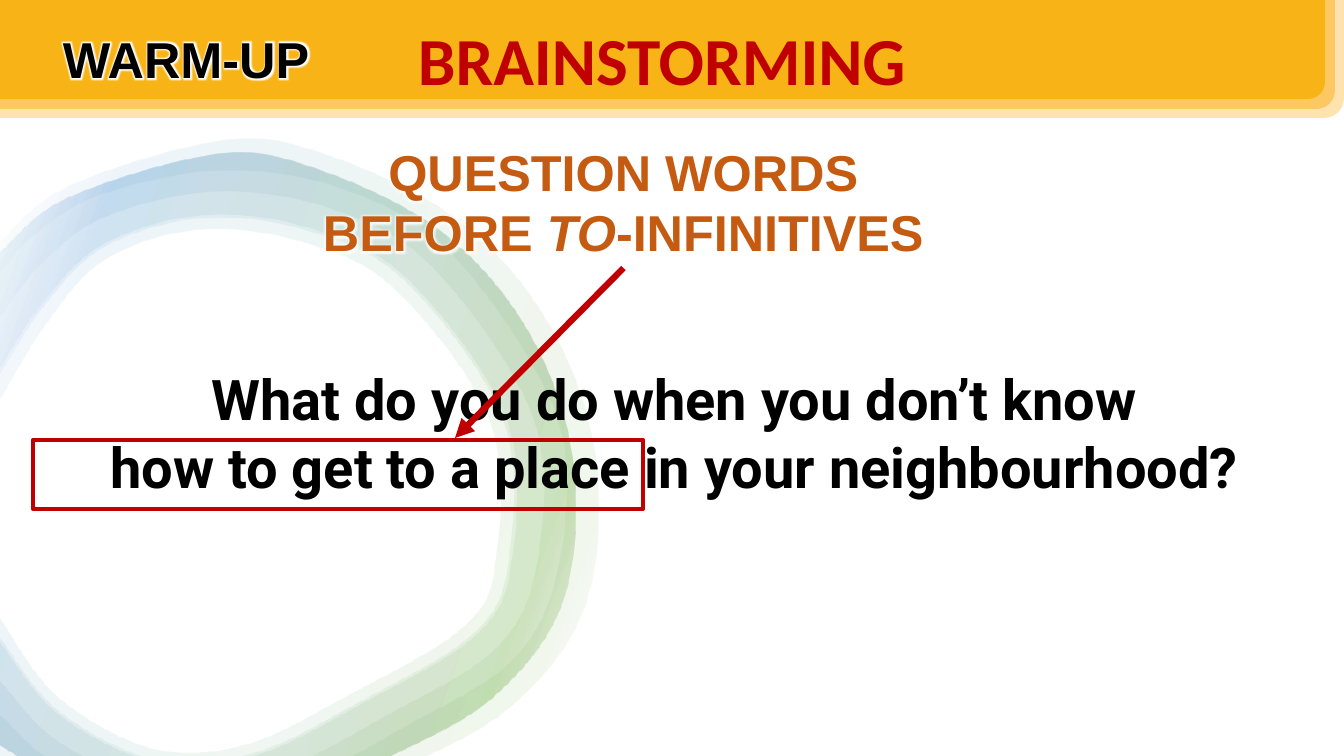
"""Build the warm-up brainstorming slide on question words before to-infinitives."""
from lxml import etree
from pptx import Presentation
from pptx.dml.color import RGBColor
from pptx.enum.shapes import MSO_CONNECTOR, MSO_SHAPE
from pptx.enum.text import MSO_ANCHOR, MSO_AUTO_SIZE, PP_ALIGN
from pptx.oxml import parse_xml
from pptx.oxml.ns import nsdecls, qn
from pptx.util import Pt

PX = 12192000 / 1344
LEFT, CENTER = PP_ALIGN.LEFT, PP_ALIGN.CENTER
TOP, GROW = MSO_ANCHOR.TOP, MSO_AUTO_SIZE.SHAPE_TO_FIT_TEXT
STRAIGHT = MSO_CONNECTOR.STRAIGHT
CORNERED, RECTANGLE = MSO_SHAPE.ROUND_1_RECTANGLE, MSO_SHAPE.RECTANGLE
COLORS = {
    "pale": "FEE3AF", "amber": "FBC864", "gold": "F8B417", "white": "FFFFFF",
    "green": "70AD47", "blue": "5B9BD5", "black": "000000", "red": "C00000",
    "rust": "C55A11",
}


def px(*lengths):
    return [round(length * PX) for length in lengths]


def smooth(anchors, steps=6):
    curve = []
    padded = [anchors[0], *anchors, anchors[-1]]
    for before, start, end, after in zip(padded, padded[1:], padded[2:], padded[3:]):
        for step in range(steps):
            t = step / steps
            curve.append(px(*(
                b + ((c - a) * t + (2 * a - 5 * b + 4 * c - d) * t ** 2
                     + (3 * b - a - 3 * c + d) * t ** 3) / 2
                for a, b, c, d in zip(before, start, end, after))))
    return curve + [px(*anchors[-1])]


prs = Presentation()
prs.slide_width, prs.slide_height = px(1344, 756)
slide = prs.slides.add_slide(prs.slide_layouts[5])
shapes = slide.shapes

for color, inset in (("pale", 0), ("amber", 9), ("gold", 19)):
    band = shapes.add_shape(CORNERED, *px(0, -1, 1344 - inset, 119 - inset))
    band.shadow.inherit = False
    band.fill.solid()
    band.fill.fore_color.rgb = RGBColor.from_string(COLORS[color])
    band.line.fill.background()
    band.element.spPr.xfrm.set("flipV", "1")

outer_edge = [
    (0, 252), (66, 198), (215, 154), (314, 168), (439, 230), (527, 330), (572, 458),
    (563, 599), (492, 697), (381, 760), (263, 815), (133, 819), (0, 745)]
thin_edge = [
    (0, 714), (61, 767), (174, 806), (292, 784), (407, 725), (514, 658), (559, 560),
    (556, 416), (453, 256), (344, 190), (222, 171), (101, 195), (35, 235), (0, 273)]
thick_edge = [
    (0, 618), (57, 696), (152, 748), (245, 744), (345, 696), (462, 627), (495, 560),
    (489, 420), (392, 287), (295, 240), (193, 230), (102, 261), (44, 326), (0, 399)]
stops = "".join(
    f'<a:gs pos="{position * 1000}"><a:srgbClr val="{COLORS[color]}">'
    '<a:alpha val="10000"/></a:srgbClr></a:gs>'
    for position, color in ((2, "white"), (16, "green"), (85, "blue"), (100, "white")))
wash = (f'<a:gradFill {nsdecls("a")}><a:gsLst>{stops}</a:gsLst>'
        '<a:lin ang="12000000" scaled="0"/></a:gradFill>')
for thickness, spread in ((0.35, 0), (0.75, 0), (1, 0), (0.8, 0), (0, 0.04)):
    outer = [(x * (1 + spread), y + (y - 485) * spread) for x, y in outer_edge]
    inner = [(a + (c - a) * thickness, b + (d - b) * thickness)
             for (a, b), (c, d) in zip(thin_edge, thick_edge)]
    outline = smooth(outer) + smooth(inner)
    builder = shapes.build_freeform(*outline[0])
    builder.add_line_segments(outline[1:], close=True)
    ring = builder.convert_to_shape()
    ring.shadow.inherit = False
    ring.line.fill.background()
    ring.element.spPr.find(qn("a:custGeom")).addnext(parse_xml(wash))

title = shapes.title
warm_up, question, topic = [shapes.add_textbox(0, 0, 0, 0) for _ in range(3)]
texts = [
    (warm_up, (53, 23, 456, 72), LEFT, "black", True,
     {"name": "Arial", "size": Pt(36)}, [[("WARM-UP", False)]]),
    (title, (374, 13, 576, 92), CENTER, "red", False,
     {"name": "Calibri", "size": Pt(48)}, [[("BRAINSTORMING", False)]]),
    (question, (38, 360, 1286, 146), CENTER, "black", False,
     {"name": "Roboto", "size": Pt(40)},
     [[("What do you do when you don’t know ", False)],
      [("how to get to a place in your neighbourhood? ", False)]]),
    (topic, (293, 136, 661, 132), CENTER, "rust", True,
     {"name": "Arial", "size": Pt(36)},
     [[("QUESTION WORDS BEFORE ", False), ("TO", True), ("-INFINITIVES", False)]]),
]
glow = (f'<a:effectLst {nsdecls("a")}><a:glow rad="63500">'
        f'<a:srgbClr val="{COLORS["white"]}"/></a:glow></a:effectLst>')
frame_format = {"word_wrap": True, "auto_size": GROW, "vertical_anchor": TOP}
for box, place, align, color, glows, font_format, paragraphs in texts:
    shapes.element.append(box.element)
    box.left, box.top, box.width, box.height = px(*place)
    frame = box.text_frame
    for key, value in frame_format.items():
        setattr(frame, key, value)
    for index, runs in enumerate(paragraphs):
        paragraph = frame.add_paragraph() if index else frame.paragraphs[0]
        paragraph.alignment = align
        paragraph.line_spacing = 1.0
        for text, italic in runs:
            run = paragraph.add_run()
            run.text = text
            for key, value in {**font_format, "bold": True, "italic": italic}.items():
                setattr(run.font, key, value)
            run.font.color.rgb = RGBColor.from_string(COLORS[color])
    if glows:
        for text_fill in list(box.element.txBody.iter(qn("a:solidFill"))):
            text_fill.addnext(parse_xml(glow))

phrase_frame = shapes.add_shape(RECTANGLE, *px(33, 440, 610, 69))
phrase_frame.shadow.inherit = False
phrase_frame.fill.background()
arrow = shapes.add_connector(STRAIGHT, *px(625, 267, 455, 438))
arrow.begin_connect(topic, 2)
for mark, width in ((phrase_frame, 3), (arrow, 4.5)):
    mark.line.color.rgb = RGBColor.from_string(COLORS["red"])
    mark.line.width = Pt(width)
etree.SubElement(arrow.element.spPr.find(qn("a:ln")), qn("a:tailEnd"), type="triangle")
etree.SubElement(arrow.element.spPr, qn("a:effectLst"))

prs.save("out.pptx")
